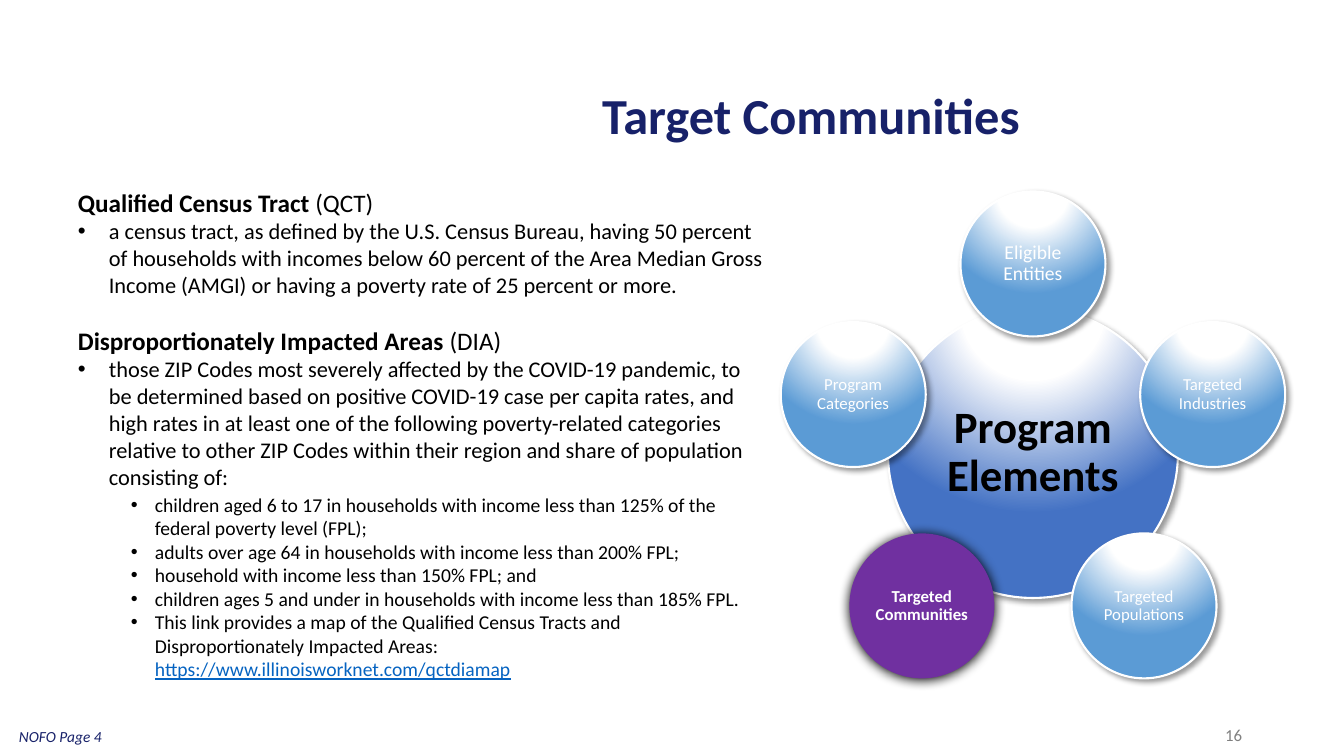
"""Build the Target Communities slide with its ring of program elements."""
import dataclasses
import math

import pptx
import pptx.dml.color
import pptx.enum.shapes
import pptx.enum.text
import pptx.oxml
import pptx.oxml.ns
import pptx.util

EMU_PER_PX = 914400 / 100.8
FONT = "Calibri"
NAVY = "172169"
WHITE = "FFFFFF"
BLACK = "000000"
SKY = "5B9BD5"
PURPLE = "7030A0"
CENTER = (1033, 453)
ORBIT = 189
ALIGN = pptx.enum.text.PP_ALIGN
ANCHOR = pptx.enum.text.MSO_ANCHOR
NS = pptx.oxml.ns.nsdecls("a")


@dataclasses.dataclass(frozen=True)
class Shadow:
    """Outer shadow with blur and distance in points, direction in degrees."""

    alpha: int
    blur: float
    dist: float
    angle: int


@dataclasses.dataclass(frozen=True)
class Element:
    """One satellite circle of the ring."""

    label: str
    size: int = 12
    active: bool = False


@dataclasses.dataclass(frozen=True)
class Span:
    """A stretch of text in one format."""

    text: str
    size: int
    bold: bool = False
    underline: bool = False
    color: str = BLACK


@dataclasses.dataclass(frozen=True)
class Para:
    """A body paragraph; left and hang are in px, before in points."""

    spans: tuple[Span, ...]
    left: int = 0
    hang: int = 0
    level: int = 0
    before: float = 0


def heading(name: str, short: str, before: float = 0) -> Para:
    """Return a bold heading followed by its abbreviation."""
    return Para((Span(name + " ", 18, bold=True), Span(short, 18)), before=before)


def point(text: str) -> Para:
    """Return a first-level bullet."""
    return Para((Span(text, 16),), left=31, hang=31)


def subpoint(*spans: Span, before: float = 0) -> Para:
    """Return a second-level bullet."""
    return Para(spans, left=77, hang=24, level=1, before=before)


SOFT = Shadow(40, 4, 3, 45)
GLOW = Shadow(100, 8.5, 1, 90)

ELEMENTS = (
    Element("Eligible Entities", size=14),
    Element("Targeted Industries"),
    Element("Targeted Populations"),
    Element("Targeted Communities", active=True),
    Element("Program Categories"),
)

BODY = (
    heading("Qualified Census Tract", "(QCT)"),
    point("a census tract, as defined by the U.S. Census Bureau, having 50 percent of "
          "households with incomes below 60 percent of the Area Median Gross Income "
          "(AMGI) or having a poverty rate of 25 percent or more."),
    heading("Disproportionately Impacted Areas", "(DIA)", before=19.5),
    point("those ZIP Codes most severely affected by the COVID-19 pandemic, to be "
          "determined based on positive COVID-19 case per capita rates, and high rates "
          "in at least one of the following poverty-related categories relative to other "
          "ZIP Codes within their region and share of population consisting of:"),
    subpoint(Span("children aged 6 to 17 in households with income less than 125% of the "
                  "federal poverty level (FPL);", 14), before=2),
    subpoint(Span("adults over age 64 in households with income less than 200% FPL;", 14)),
    subpoint(Span("household with income less than 150% FPL; and", 14)),
    subpoint(Span("children ages 5 and under in households with income less than 185% FPL.", 14)),
    subpoint(Span("This link provides a map of the Qualified Census Tracts and "
                  "Disproportionately Impacted Areas: ", 14),
             Span("https://www.illinoisworknet.com/qctdiamap", 14,
                  underline=True, color="0563C1")),
)


def px(n: float) -> pptx.util.Emu:
    """Turn px into EMU."""
    return pptx.util.Emu(round(n * EMU_PER_PX))


def rgb(color: str) -> pptx.dml.color.RGBColor:
    """Turn a hex string into a colour."""
    return pptx.dml.color.RGBColor.from_string(color)


def add_text(p, text: str, *, size: int, color: str = BLACK, bold: bool = False,
             italic: bool = False, underline: bool = False, align=None,
             spacing: float | None = None) -> None:
    """Add a formatted run to a paragraph."""
    r = p.add_run()
    r.text = text
    r.font.name = FONT
    r.font.size = pptx.util.Pt(size)
    r.font.bold = bold
    r.font.italic = italic
    r.font.underline = underline
    r.font.color.rgb = rgb(color)
    if align is not None:
        p.alignment = align
    if spacing is not None:
        p.line_spacing = spacing


def add_box(slide, left: int, top: int, width: int, height: int, anchor=ANCHOR.TOP):
    """Add a wrapping text box and return its text frame."""
    tf = slide.shapes.add_textbox(px(left), px(top), px(width), px(height)).text_frame
    tf.word_wrap = True
    tf.vertical_anchor = anchor
    return tf


def set_gradient(s, color: str) -> None:
    """Fill a shape with a white highlight that fades down into a colour."""
    s.fill.background()
    sp = s._element.spPr
    stops = "".join(
        f'<a:gs pos="{pos}000"><a:srgbClr val="{c}"/></a:gs>'
        for pos, c in ((0, WHITE), (35, WHITE), (100, color)))
    sp.replace(sp.find(pptx.oxml.ns.qn("a:noFill")), pptx.oxml.parse_xml(
        f'<a:gradFill {NS} rotWithShape="1"><a:gsLst>{stops}</a:gsLst>'
        '<a:path path="circle"><a:fillToRect l="50000" t="-80000" r="50000" b="180000"/>'
        '</a:path></a:gradFill>'))


def set_shadow(s, shadow: Shadow) -> None:
    """Give a shape an outer shadow."""
    s.shadow.inherit = False
    s._element.spPr.find(pptx.oxml.ns.qn("a:effectLst")).append(pptx.oxml.parse_xml(
        f'<a:outerShdw {NS} blurRad="{pptx.util.Pt(shadow.blur)}" '
        f'dist="{pptx.util.Pt(shadow.dist)}" dir="{shadow.angle * 60000}" rotWithShape="0">'
        f'<a:srgbClr val="{BLACK}"><a:alpha val="{shadow.alpha * 1000}"/></a:srgbClr>'
        '</a:outerShdw>'))


def add_circle(slide, x: float, y: float, diameter: int, label: str, *, fill: str,
               size: int, color: str, bold: bool, inset: int, active: bool = False) -> None:
    """Add a labelled circle centred on a point."""
    s = slide.shapes.add_shape(pptx.enum.shapes.MSO_SHAPE.OVAL, px(x - diameter / 2),
                               px(y - diameter / 2), px(diameter), px(diameter))
    if active:
        s.fill.solid()
        s.fill.fore_color.rgb = rgb(fill)
        s.line.fill.background()
    else:
        set_gradient(s, fill)
        s.line.color.rgb = rgb(WHITE)
        s.line.width = pptx.util.Pt(1.5)
    set_shadow(s, GLOW if active else SOFT)
    tf = s.text_frame
    tf.word_wrap = True
    tf.vertical_anchor = ANCHOR.MIDDLE
    tf.margin_left = tf.margin_right = tf.margin_top = tf.margin_bottom = px(inset)
    add_text(tf.paragraphs[0], label, size=size, color=color, bold=bold,
             align=ALIGN.CENTER, spacing=0.9)


def add_body(slide) -> None:
    """Add the definitions on the left."""
    tf = add_box(slide, 68, 182, 707, 509)
    for i, para in enumerate(BODY):
        p = tf.add_paragraph() if i else tf.paragraphs[0]
        p.level = para.level
        if para.before:
            p.space_before = pptx.util.Pt(para.before)
        if para.hang:
            pPr = p._p.get_or_add_pPr()
            pPr.set("marL", str(px(para.left)))
            pPr.set("indent", str(px(-para.hang)))
            pPr.append(pptx.oxml.parse_xml(f'<a:buFont {NS} typeface="Arial"/>'))
            pPr.append(pptx.oxml.parse_xml(f'<a:buChar {NS} char="•"/>'))
        for span in para.spans:
            add_text(p, span.text, size=span.size, bold=span.bold,
                     underline=span.underline, color=span.color)


def add_ring(slide) -> None:
    """Add the hub and its evenly spaced satellites."""
    x, y = CENTER
    add_circle(slide, x, y, 290, "Program Elements", fill="4472C4", size=32,
               color=BLACK, bold=True, inset=4)
    for i, e in enumerate(ELEMENTS):
        a = math.tau * i / len(ELEMENTS)
        add_circle(slide, x + ORBIT * math.sin(a), y - ORBIT * math.cos(a), 145, e.label,
                   fill=PURPLE if e.active else SKY, size=e.size, color=WHITE,
                   bold=e.active, inset=2, active=e.active)


def main() -> None:
    """Build and save the slide."""
    prs = pptx.Presentation()
    prs.slide_width, prs.slide_height = px(1344), px(756)
    slide = prs.slides.add_slide(prs.slide_layouts[6])
    add_text(add_box(slide, 391, 88, 840, 61, ANCHOR.MIDDLE).paragraphs[0],
             "Target Communities", size=36, color=NAVY, bold=True,
             align=ALIGN.CENTER, spacing=0.9)
    add_text(add_box(slide, 950, 715, 302, 40, ANCHOR.MIDDLE).paragraphs[0],
             "16", size=12, color="808080", align=ALIGN.RIGHT)
    add_ring(slide)
    add_body(slide)
    add_text(add_box(slide, 9, 722, 235, 29).paragraphs[0],
             "NOFO Page 4", size=11, color=NAVY, italic=True)
    prs.save("out.pptx")


if __name__ == "__main__":
    main()
